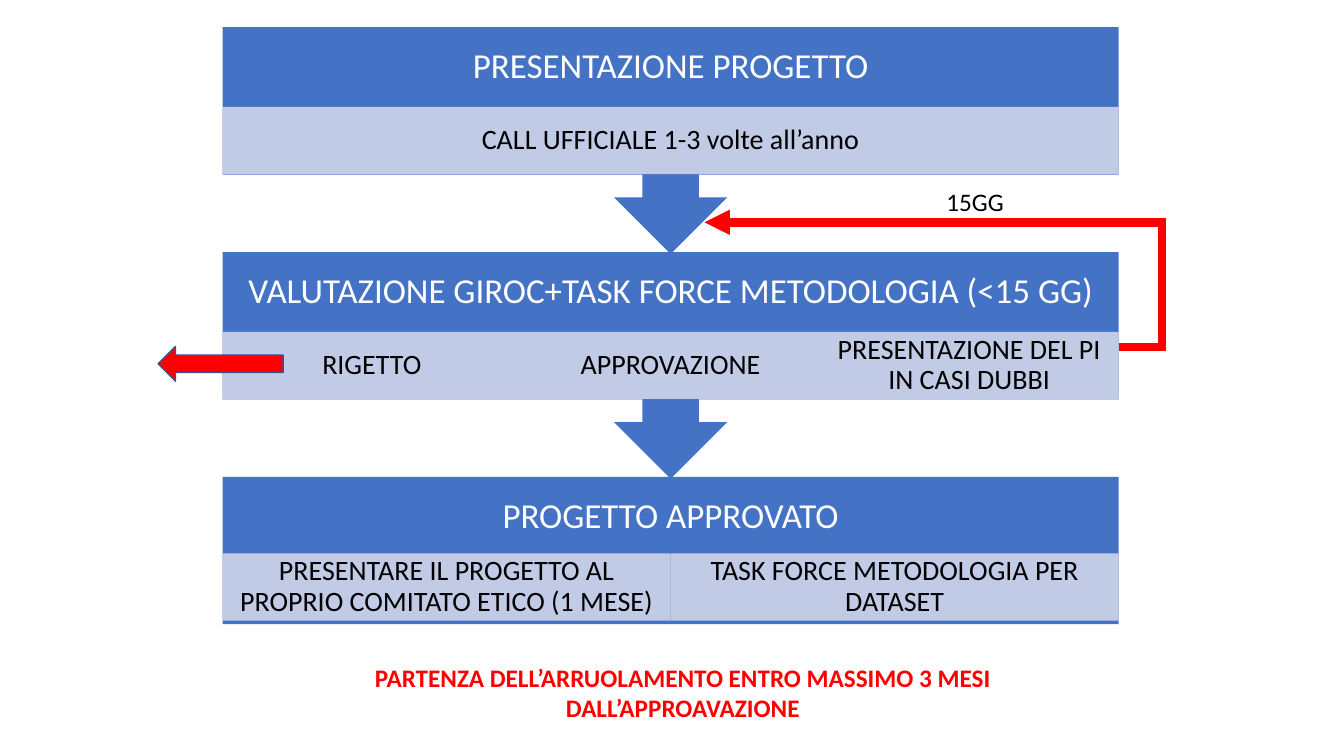
from dataclasses import dataclass

from lxml import etree
from pptx import Presentation
from pptx.dml.color import RGBColor
from pptx.enum.shapes import MSO_CONNECTOR, MSO_SHAPE
from pptx.enum.text import MSO_ANCHOR, PP_ALIGN
from pptx.oxml.ns import qn
from pptx.util import Pt

RECT, CALLOUT, LEFT_ARROW = MSO_SHAPE.RECTANGLE, MSO_SHAPE.UP_ARROW_CALLOUT, MSO_SHAPE.LEFT_ARROW
ELBOW = MSO_CONNECTOR.ELBOW
MIDDLE, TOP = MSO_ANCHOR.MIDDLE, MSO_ANCHOR.TOP
CENTER, LEFT = PP_ALIGN.CENTER, PP_ALIGN.LEFT


@dataclass(frozen=True)
class Theme:
    font: str = "Calibri"
    blue: str = "4472C4"
    pale: str = "CFD5EA"
    edge: str = "325491"
    red: str = "FF0000"
    white: str = "FFFFFF"
    black: str = "000000"
    title: int = 25
    body: int = 20
    note: int = 18


T = Theme()

# Flow geometry in points
FLOW_X, FLOW_Y, FLOW_W = 159, 19.4, 640
PITCH, CALLOUT_H, BLOCK_H = 160.6, 162, 105.3
HEAD_H, CELL_H, LAST_CELL_DY = 57, 48, 54.7

STAGES = [
    ("PRESENTAZIONE PROGETTO", ["CALL UFFICIALE 1-3 volte all’anno"]),
    ("VALUTAZIONE GIROC+TASK FORCE METODOLOGIA (<15 GG)",
     ["RIGETTO", "APPROVAZIONE", "PRESENTAZIONE DEL PI IN CASI DUBBI"]),
    ("PROGETTO APPROVATO",
     ["PRESENTARE IL PROGETTO AL PROPRIO COMITATO ETICO (1 MESE)",
      "TASK FORCE METODOLOGIA PER DATASET"]),
]


def add_block(s, kind, box, fill, line=None, alpha=None):
    sp = s.shapes.add_shape(kind, *map(Pt, box))
    sp.shadow.inherit = False
    sp.fill.solid()
    sp.fill.fore_color.rgb = RGBColor.from_string(fill)
    if alpha:
        clr = sp.fill._xPr.find(".//" + qn("a:srgbClr"))
        etree.SubElement(clr, qn("a:alpha"), val=str(alpha * 1000))
    if line:
        sp.line.color.rgb = RGBColor.from_string(line)
        sp.line.width = Pt(1)
    else:
        sp.line.fill.background()
    return sp


def write(sp, text, size=T.body, color=T.black, bold=False, align=CENTER,
          anchor=MIDDLE, insets=(11.5, 2), spacing=0.9):
    tf = sp.text_frame
    tf.word_wrap = True
    tf.vertical_anchor = anchor
    tf.margin_left = tf.margin_right = Pt(insets[0])
    tf.margin_top = tf.margin_bottom = Pt(insets[1])
    p = tf.paragraphs[0]
    p.alignment = align
    p.line_spacing = spacing
    r = p.add_run()
    r.text = text
    r.font.name, r.font.size, r.font.bold = T.font, Pt(size), bold
    r.font.color.rgb = RGBColor.from_string(color)


def add_stage(s, x, y, w, title, cells, last):
    # Blue block, with a downward arrow unless it ends the flow
    if last:
        add_block(s, RECT, (x, y, w, BLOCK_H), T.blue)
    else:
        add_block(s, CALLOUT, (x, y, w, CALLOUT_H), T.blue).rotation = 180
    head = s.shapes.add_textbox(*map(Pt, (x, y, w, HEAD_H)))
    write(head, title, size=T.title, color=T.white, insets=(13.7, 13.7))

    # Equal cells under the heading
    cell_y = y + (LAST_CELL_DY if last else HEAD_H)
    cell_w = w / len(cells)
    for i, text in enumerate(cells):
        cell = add_block(s, RECT, (x + i * cell_w, cell_y, cell_w, CELL_H), T.pale, alpha=90)
        write(cell, text)


def add_return_path(s, x, y, w, h):
    # From the lower right, out past the box, back to the upper left
    cx = s.shapes.add_connector(ELBOW, Pt(x + w), Pt(y + h), Pt(x), Pt(y))
    cx.line.color.rgb = RGBColor.from_string(T.red)
    cx.line.width = Pt(6)
    ln = cx.line._get_or_add_ln()
    etree.SubElement(ln, qn("a:miter"), lim="800000")
    etree.SubElement(ln, qn("a:tailEnd"), type="triangle")
    sp_pr = cx._element.spPr
    etree.SubElement(sp_pr, qn("a:effectLst"))
    guides = sp_pr.find(".//" + qn("a:avLst"))
    etree.SubElement(guides, qn("a:gd"), name="adj1", fmla="val -10500")


def add_note(s, box, text, **fmt):
    tb = s.shapes.add_textbox(*map(Pt, box))
    write(tb, text, size=T.note, anchor=TOP, insets=(7.2, 3.6), spacing=1.0, **fmt)


def add_flow_slide(prs):
    s = prs.slides.add_slide(prs.slide_layouts[6])
    # Stages, bottom one first so that each arrow tip lies on top
    for i, (title, cells) in reversed(list(enumerate(STAGES))):
        add_stage(s, FLOW_X, FLOW_Y + i * PITCH, FLOW_W, title, cells, i == len(STAGES) - 1)

    # Rejection and resubmission paths
    add_block(s, LEFT_ARROW, (113, 247.5, 89.3, 24.8), T.red, line=T.edge)
    add_return_path(s, 503.3, 158.8, 295.7, 89.2)

    # Notes
    add_note(s, (669, 129.6, 98.6, 29), "15GG", align=LEFT)
    add_note(s, (240.5, 469.4, 494.6, 51),
             "PARTENZA DELL’ARRUOLAMENTO ENTRO MASSIMO 3 MESI DALL’APPROAVAZIONE",
             color=T.red, bold=True)


def main():
    prs = Presentation()
    prs.slide_width, prs.slide_height = Pt(960), Pt(540)
    add_flow_slide(prs)
    prs.save("out.pptx")


if __name__ == "__main__":
    main()
